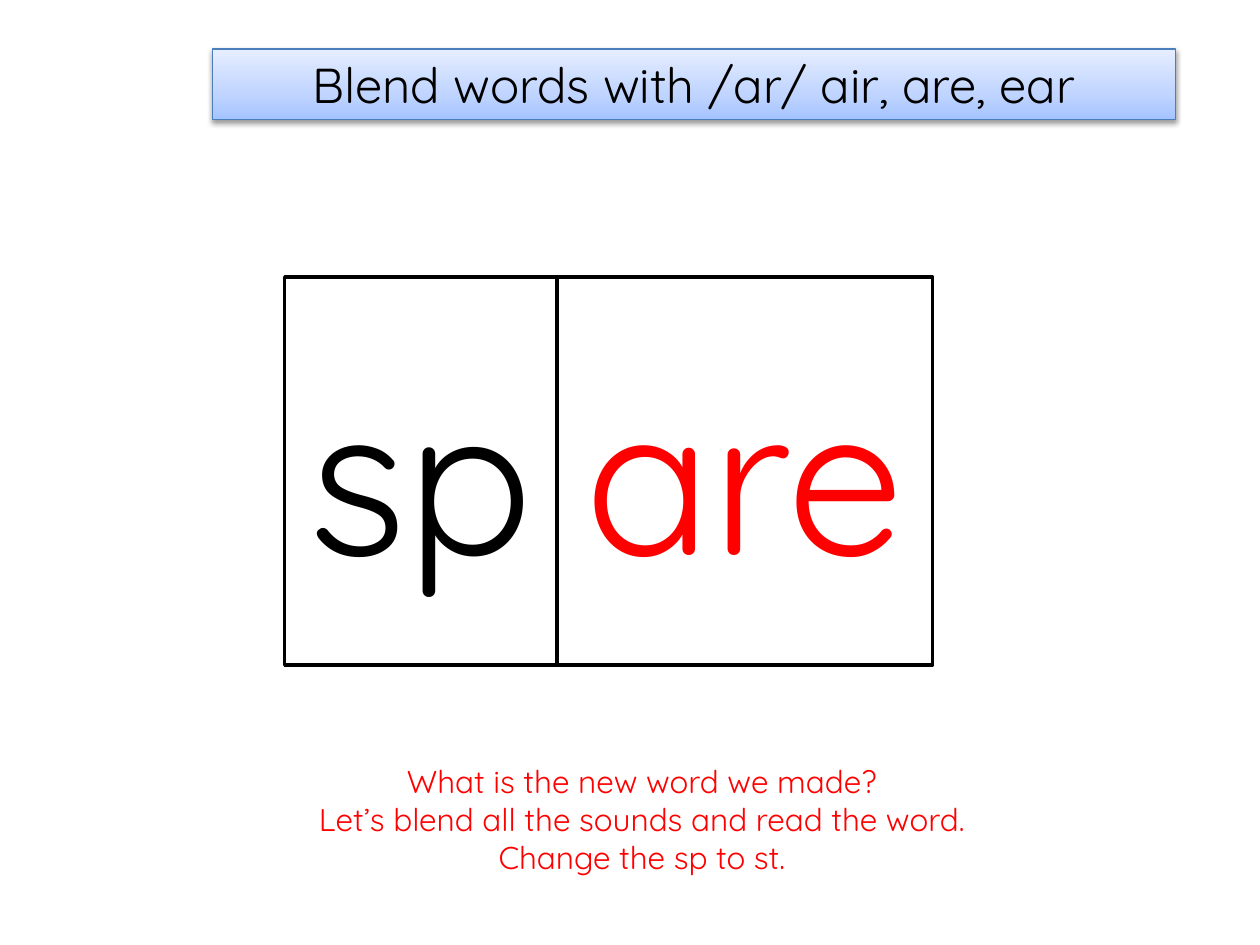
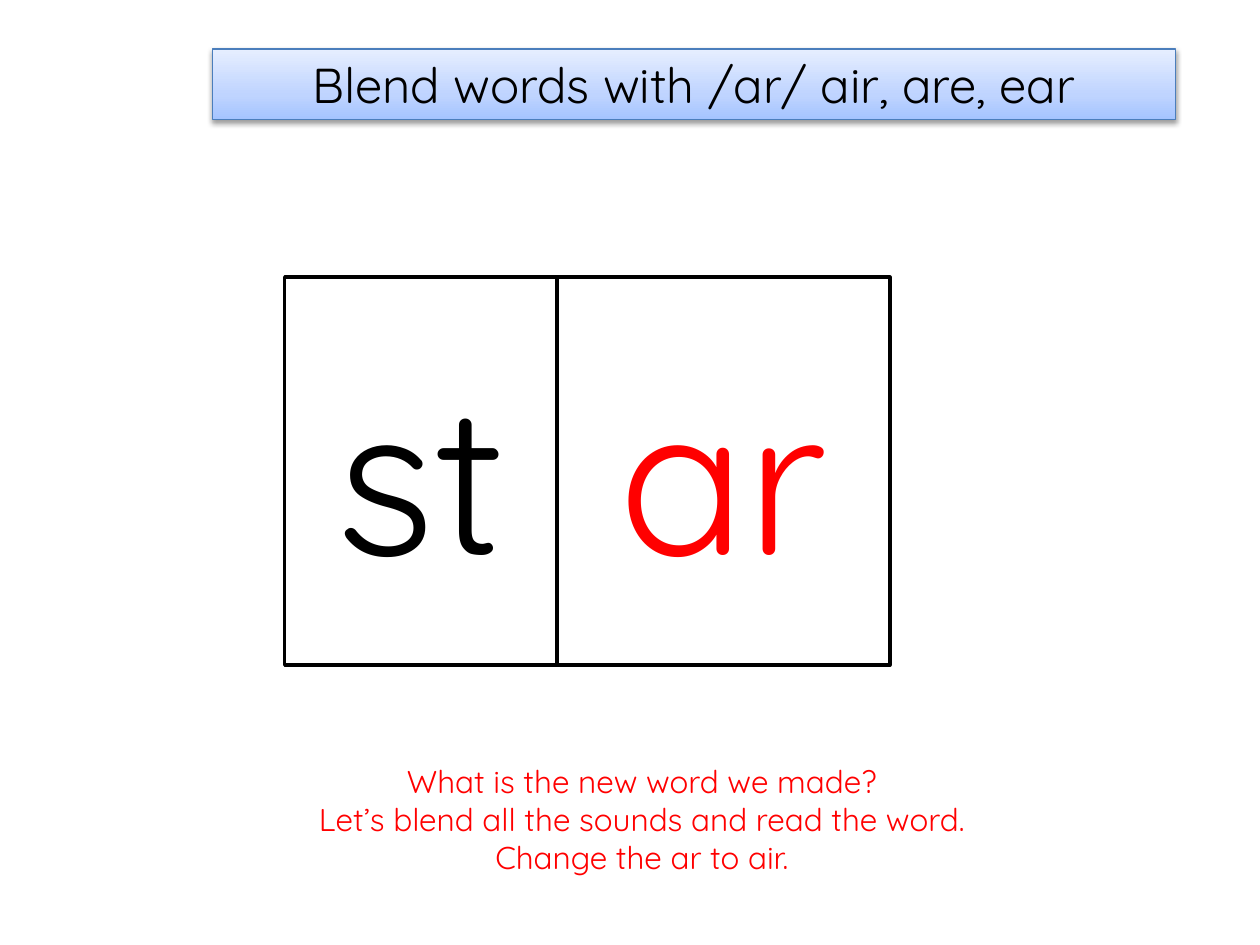
from lxml import etree
from pptx import Presentation
from pptx.dml.color import RGBColor
from pptx.enum.shapes import MSO_SHAPE
from pptx.enum.text import MSO_ANCHOR, MSO_AUTO_SIZE, PP_ALIGN
from pptx.oxml.ns import qn
from pptx.util import Cm, Pt

RECTANGLE = MSO_SHAPE.RECTANGLE
MIDDLE = MSO_ANCHOR.MIDDLE
CENTER = PP_ALIGN.CENTER
FIT_SHAPE = MSO_AUTO_SIZE.SHAPE_TO_FIT_TEXT

FONT = "Quicksand"
BLACK, WHITE, RED = "000000", "FFFFFF", "FF0000"
TITLE_LINE = "4B7EBC"
TITLE_STOPS = [(0, "A4C4FF"), (35, "BFD4FF"), (100, "E6EEFF")]
TITLE = "Blend words with /ar/ air, are, ear"
PROMPTS = ["What is the new word we made?",
           "Let’s blend all the sounds and read the word."]

# Sound boxes stand side by side from this corner
BOX_LEFT, BOX_TOP, BOX_HEIGHT = 5.74, 5.59, 7.82
ONSET_WIDTH = 5.49

# Onset, rime, width of the rime box, next change
WORDS = [
    ("sp", "are", 7.57, "Change the sp to st."),
    ("st", "ar", 6.71, "Change the ar to air."),
]


def color(hex_string):
    return RGBColor.from_string(hex_string)


def write(shape, lines, size, hex_string):
    frame = shape.text_frame
    frame.word_wrap = True
    frame.text = "\n".join(lines)
    for paragraph in frame.paragraphs:
        paragraph.alignment = CENTER
        paragraph.font.name = FONT
        paragraph.font.size = Pt(size)
        paragraph.font.color.rgb = color(hex_string)


presentation = Presentation()
presentation.slide_width = Cm(25.4)
presentation.slide_height = Cm(19.05)
blank_layout = presentation.slide_layouts[6]

for onset, rime, rime_width, change in WORDS:
    slide = presentation.slides.add_slide(blank_layout)

    # Sound boxes
    left = BOX_LEFT
    for letters, width, letter_color in [(onset, ONSET_WIDTH, BLACK),
                                         (rime, rime_width, RED)]:
        box = slide.shapes.add_shape(RECTANGLE, Cm(left), Cm(BOX_TOP),
                                     Cm(width), Cm(BOX_HEIGHT))
        box.shadow.inherit = False
        box.fill.solid()
        box.fill.fore_color.rgb = color(WHITE)
        box.line.color.rgb = color(BLACK)
        box.line.width = Pt(2)
        box.text_frame.vertical_anchor = MIDDLE
        write(box, [letters], 120, letter_color)
        left += width

    # Teacher prompts
    prompt = slide.shapes.add_textbox(Cm(4.09), Cm(15.24), Cm(17.7), Cm(2.57))
    write(prompt, PROMPTS + [change], 18, RED)
    prompt.text_frame.auto_size = FIT_SHAPE

    # Title band
    band = slide.shapes.add_shape(RECTANGLE, Cm(4.29), Cm(0.99),
                                  Cm(19.41), Cm(1.42))
    band.line.color.rgb = color(TITLE_LINE)
    band.line.width = Pt(0.75)
    band.text_frame.vertical_anchor = MIDDLE
    write(band, [TITLE], 28, BLACK)

    # Band gradient, three stops from bottom to top
    band.fill.gradient()
    band.fill.gradient_angle = 90
    properties = band._element.spPr
    stop_list = properties.find(qn("a:gradFill")).find(qn("a:gsLst"))
    for old_stop in list(stop_list):
        stop_list.remove(old_stop)
    for position, stop_color in TITLE_STOPS:
        stop = etree.SubElement(stop_list, qn("a:gs"), pos=str(position * 1000))
        etree.SubElement(stop, qn("a:srgbClr"), val=stop_color)

    # Band shadow, falling straight down
    band.shadow.inherit = False
    shadow = etree.SubElement(properties.find(qn("a:effectLst")),
                              qn("a:outerShdw"), blurRad=str(Pt(3.1)),
                              dist=str(Pt(1.6)), dir="5400000", rotWithShape="0")
    shadow_color = etree.SubElement(shadow, qn("a:srgbClr"), val=BLACK)
    etree.SubElement(shadow_color, qn("a:alpha"), val="38000")

presentation.save("out.pptx")
